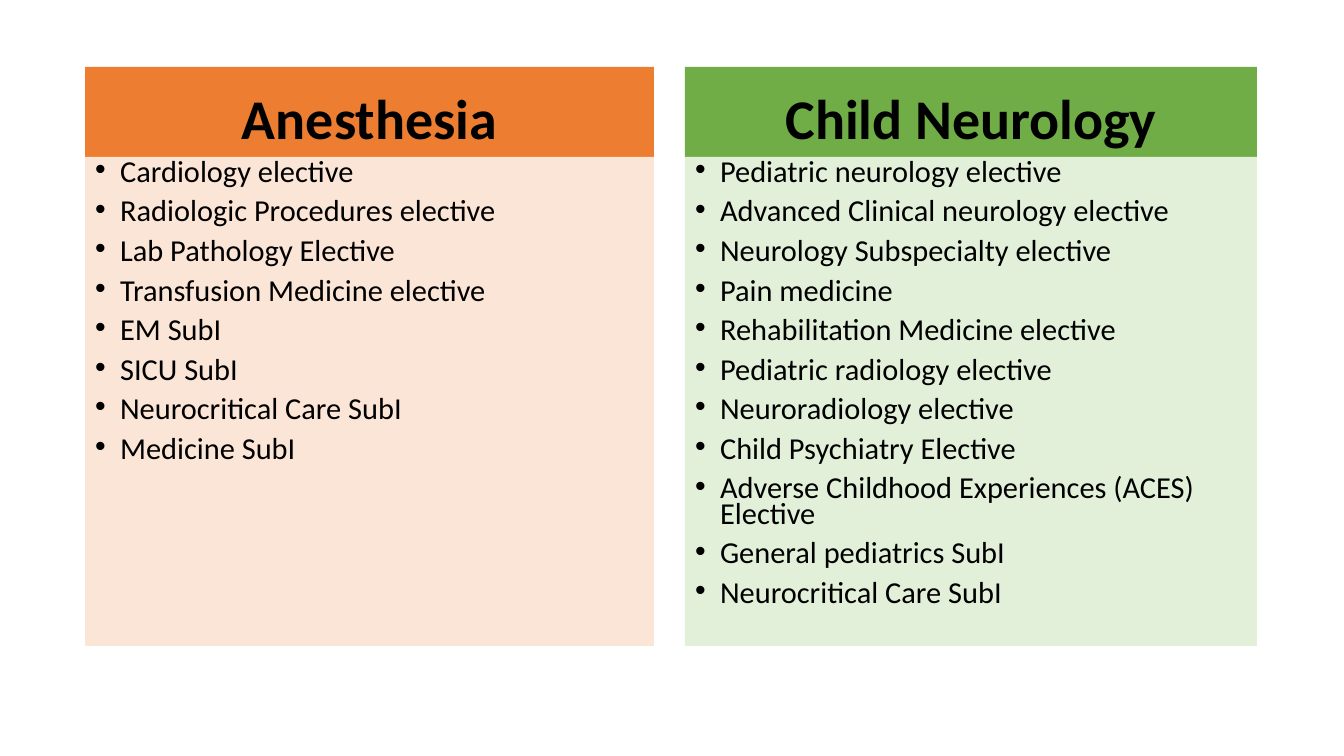
"""Build a slide comparing electives for two specialties."""
from pptx import Presentation
from pptx.dml.color import RGBColor
from pptx.enum.text import MSO_ANCHOR, MSO_AUTO_SIZE, PP_ALIGN
from pptx.util import Pt

BLACK = RGBColor(0x00, 0x00, 0x00)
ORANGE = RGBColor(0xED, 0x7D, 0x31)
PALE_ORANGE = RGBColor(0xFB, 0xE5, 0xD6)
GREEN = RGBColor(0x70, 0xAD, 0x47)
PALE_GREEN = RGBColor(0xE2, 0xF0, 0xD9)
CENTER, LEFT = PP_ALIGN.CENTER, PP_ALIGN.LEFT
BOTTOM, TOP = MSO_ANCHOR.BOTTOM, MSO_ANCHOR.TOP
NO_AUTOFIT = MSO_AUTO_SIZE.NONE

SPECIALTIES = [
    ("Anesthesia", 85, 569, ORANGE, PALE_ORANGE, [
        "Cardiology elective",
        "Radiologic Procedures elective",
        "Lab Pathology Elective",
        "Transfusion Medicine elective",
        "EM SubI",
        "SICU SubI",
        "Neurocritical Care SubI",
        "Medicine SubI",
    ]),
    ("Child Neurology", 685, 572, GREEN, PALE_GREEN, [
        "Pediatric neurology elective",
        "Advanced Clinical neurology elective",
        "Neurology Subspecialty elective",
        "Pain medicine",
        "Rehabilitation Medicine elective",
        "Pediatric radiology elective",
        "Neuroradiology elective",
        "Child Psychiatry Elective",
        "Adverse Childhood Experiences (ACES) Elective",
        "General pediatrics SubI",
        "Neurocritical Care SubI",
    ]),
]
SLIDE_WIDTH, SLIDE_HEIGHT = 1344, 756
HEADER_TOP, HEADER_HEIGHT, LIST_HEIGHT = 67, 90, 489
BULLET_INDENT = 25
COMPARISON_LAYOUT = 4


def px(length):
    """Turn pixels into EMU."""
    return round(length * 914400 / 100.8)


def fill_box(box, place, color, lines, size, bold, spacing, align, anchor):
    """Place a placeholder and give it a fill and formatted lines."""
    box.left, box.top, box.width, box.height = map(px, place)
    box.fill.solid()
    box.fill.fore_color.rgb = color
    frame = box.text_frame
    frame.text = "\n".join(lines)
    frame.word_wrap = True
    frame.auto_size = NO_AUTOFIT
    frame.vertical_anchor = anchor
    for para in frame.paragraphs:
        para.alignment = align
        para.line_spacing = spacing
        para.space_before = Pt(10)
        font = para.runs[0].font
        font.name, font.size, font.bold = "Calibri", Pt(size), bold
        font.color.rgb = BLACK


def hang_bullets(box):
    """Set the hanging indent of the bulleted lines."""
    for para in box.text_frame.paragraphs:
        properties = para._p.get_or_add_pPr()
        properties.set("marL", str(px(BULLET_INDENT)))
        properties.set("indent", str(-px(BULLET_INDENT)))


def main():
    """Build and save the deck."""
    deck = Presentation()
    deck.slide_width, deck.slide_height = px(SLIDE_WIDTH), px(SLIDE_HEIGHT)
    page = deck.slides.add_slide(deck.slide_layouts[COMPARISON_LAYOUT])
    title = page.shapes.title._element
    title.getparent().remove(title)
    for number, (name, left, width, strong, pale, electives) in enumerate(SPECIALTIES):
        header = page.placeholders[2 * number + 1]
        listing = page.placeholders[2 * number + 2]
        fill_box(header, (left, HEADER_TOP, width, HEADER_HEIGHT), strong,
                 [name], 40, True, 0.9, CENTER, BOTTOM)
        fill_box(listing, (left, HEADER_TOP + HEADER_HEIGHT, width, LIST_HEIGHT), pale,
                 electives, 21.7, False, 0.7, LEFT, TOP)
        hang_bullets(listing)
    deck.save("out.pptx")


if __name__ == "__main__":
    main()
